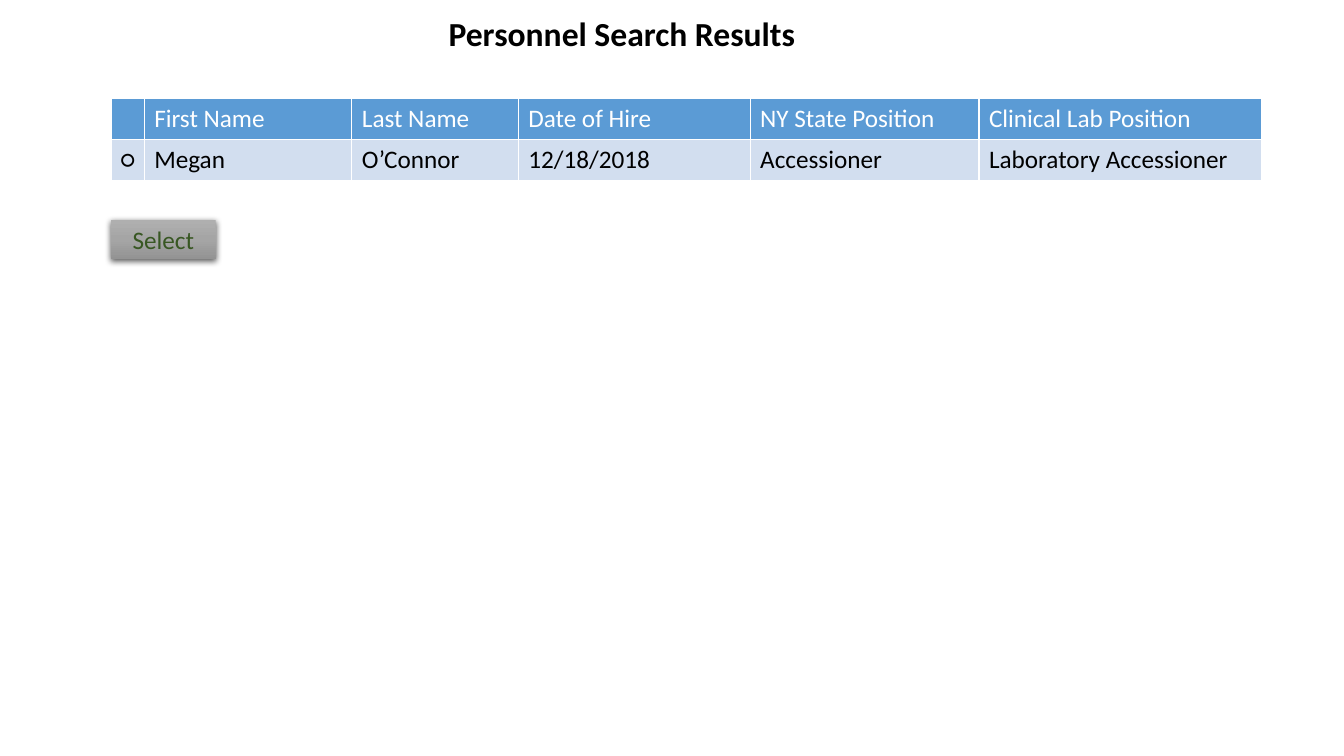
"""Build the personnel search results slide."""
from copy import deepcopy

from lxml import etree
from pptx import Presentation
from pptx.dml.color import RGBColor
from pptx.enum.shapes import MSO_SHAPE
from pptx.enum.text import MSO_ANCHOR, MSO_AUTO_SIZE, PP_ALIGN
from pptx.oxml import parse_xml
from pptx.oxml.ns import qn
from pptx.util import Inches, Pt

RECTANGLE = MSO_SHAPE.RECTANGLE
MIDDLE = MSO_ANCHOR.MIDDLE
GROW = MSO_AUTO_SIZE.SHAPE_TO_FIT_TEXT
CENTER = PP_ALIGN.CENTER
DRAWING = "http://schemas.openxmlformats.org/drawingml/2006/main"


def color(value):
    return RGBColor.from_string(value)


def write(para, text, size, hue, bold=False):
    span = para.add_run()
    span.text = text
    span.font.color.rgb = color(hue)
    for name, value in {"size": Pt(size), "name": "Calibri", "bold": bold}.items():
        setattr(span.font, name, value)


deck = Presentation()
deck.slide_width, deck.slide_height = Inches(13.33), Inches(7.5)
page = deck.slides.add_slide(deck.slide_layouts[6])

title = page.shapes.add_textbox(Inches(4.35), Inches(0.08), Inches(3.68), Inches(0.5))
title.text_frame.word_wrap = False
title.text_frame.auto_size = GROW
write(title.text_frame.paragraphs[0], "Personnel Search Results", 24, "000000", True)

rows = [
    ["", "First Name", "Last Name", "Date of Hire", "NY State Position", "Clinical Lab Position"],
    ["○", "Megan", "O’Connor", "12/18/2018", "Accessioner", "Laboratory Accessioner"],
]
row_styles = [("5B9BD5", "FFFFFF"), ("D2DEEF", "000000")]
widths = [0.33, 2.06, 1.65, 2.3, 2.27, 2.8]
results = page.shapes.add_table(
    len(rows), len(widths), Inches(1.1), Inches(0.98), Inches(sum(widths)), Inches(0.81)
).table
for column, width in zip(results.columns, widths):
    column.width = Inches(width)
for row_index, (texts, (fill, hue)) in enumerate(zip(rows, row_styles)):
    for column_index, text in enumerate(texts):
        cell = results.cell(row_index, column_index)
        for place, side in enumerate(["lnL", "lnR", "lnT", "lnB"]):
            cell._tc.get_or_add_tcPr().insert(place, parse_xml(
                f'<a:{side} xmlns:a="{DRAWING}" w="12700"><a:solidFill>'
                f'<a:srgbClr val="FFFFFF"/></a:solidFill></a:{side}>'))
        cell.fill.solid()
        cell.fill.fore_color.rgb = color(fill)
        para = cell.text_frame.paragraphs[0]
        para.font.size = Pt(18)
        if text:
            write(para, text, 18, hue)

button = page.shapes.add_shape(RECTANGLE, Inches(1.1), Inches(2.18), Inches(1.04), Inches(0.39))
button.line.fill.background()
button.fill.gradient()
button.fill.gradient_angle = 270
stop_list = button._element.spPr.find(".//" + qn("a:gsLst"))
stop_list.insert(1, deepcopy(stop_list[0]))
shades = [(0, "AFAFAF"), (0.5, "A5A5A5"), (1, "939393")]
for stop, (position, shade) in zip(button.fill.gradient_stops, shades):
    stop.position = position
    stop.color.rgb = color(shade)

button.shadow.inherit = False
effects = button._element.spPr.find(qn("a:effectLst"))
shadow = etree.SubElement(effects, qn("a:outerShdw"), blurRad=str(Pt(4.5)),
                          dist=str(Pt(1.5)), dir="5400000", algn="ctr", rotWithShape="0")
shadow_color = etree.SubElement(shadow, qn("a:srgbClr"), val="000000")
etree.SubElement(shadow_color, qn("a:alpha"), val="63000")

button.text_frame.vertical_anchor = MIDDLE
label = button.text_frame.paragraphs[0]
label.alignment = CENTER
write(label, "Select", 18, "385723")

deck.save("out.pptx")
